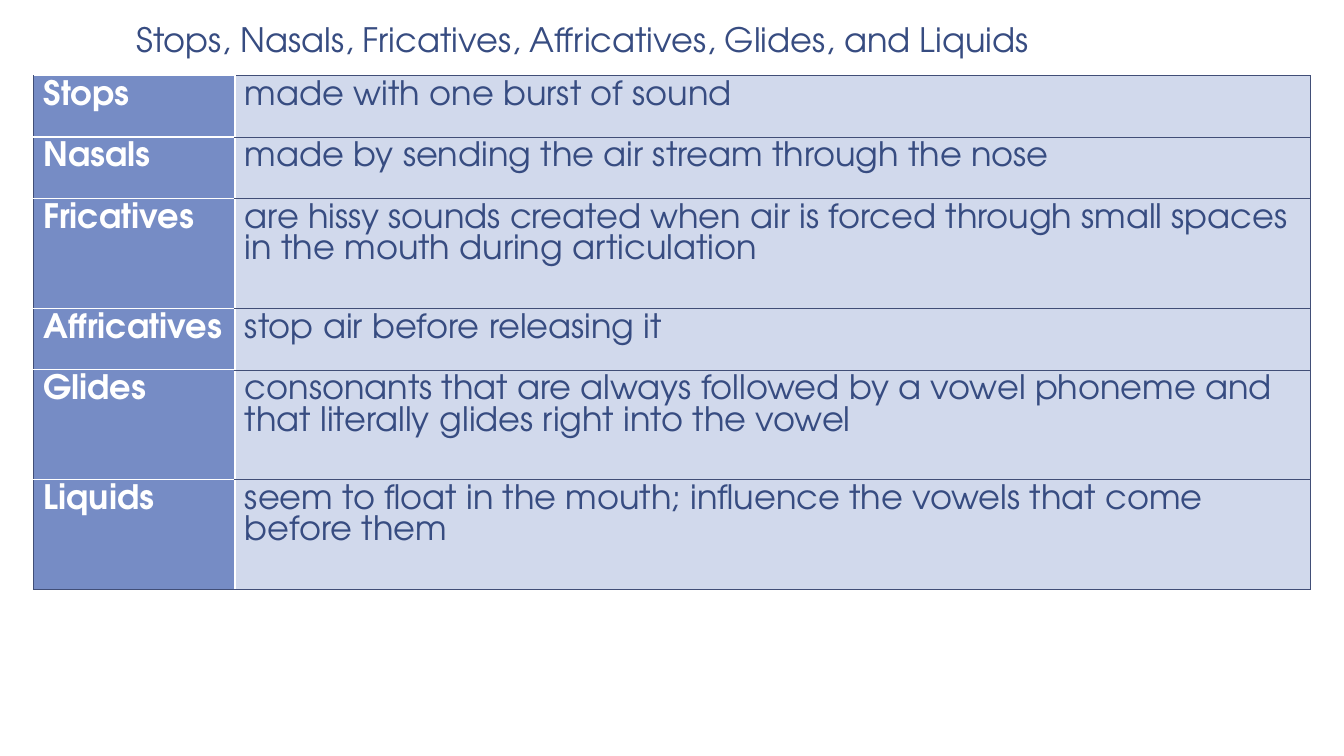
from lxml import etree
from pptx import Presentation
from pptx import util as u
from pptx.dml.color import RGBColor
from pptx.enum import text
from pptx.oxml.ns import qn

# Content
TITLE = "Stops, Nasals, Fricatives, Affricatives, Glides, and Liquids"
CONSONANTS = [
    ("Stops", "made with one burst of sound"),
    ("Nasals", "made by sending the air stream through the nose"),
    ("Fricatives", "are hissy sounds created when air is forced through "
     "small spaces in the mouth during articulation"),
    ("Affricatives", "stop air before releasing it"),
    ("Glides", "consonants that are always followed by a vowel phoneme and "
     "that literally glides right into the vowel"),
    ("Liquids", "seem to float in the mouth; influence the vowels that come "
     "before them"),
]

# Style
FONT, SIZE = "TeX Gyre Adventor", u.Pt(24)
NAVY = RGBColor(0x37, 0x4C, 0x81)
EDGE = RGBColor(0x41, 0x4E, 0x77)
BLUE = RGBColor(0x76, 0x8C, 0xC5)
PALE = RGBColor(0xD1, 0xD9, 0xEC)
WHITE = RGBColor(0xFF, 0xFF, 0xFF)
DARK_LINE, WHITE_LINE = (EDGE, 0.5), (WHITE, 1)
COLUMN_WIDTHS = (2, 10.67)
SHORT_ROW, TALL_ROW = 0.61, 1.09
LINE_LENGTH = 60  # longer descriptions take two lines


def format_font(paragraph, color, bold=False):
    values = {"name": FONT, "size": SIZE, "bold": bold}
    for name, value in values.items():
        setattr(paragraph.font, name, value)
    paragraph.font.color.rgb = color


def set_borders(cell, **borders):
    properties = cell._tc.get_or_add_tcPr()
    for side in "LRTB":
        color, width = borders[side]
        line = etree.SubElement(properties, qn(f"a:ln{side}"), w=str(u.Pt(width)))
        fill = etree.SubElement(line, qn("a:solidFill"))
        etree.SubElement(fill, qn("a:srgbClr"), val=str(color))


presentation = Presentation()
presentation.slide_width = u.Inches(13.33)
presentation.slide_height = u.Inches(7.5)
slide = presentation.slides.add_slide(presentation.slide_layouts[5])

# Title
title = slide.shapes.title
title.left, title.top = u.Inches(1.22), u.Inches(0.08)
title.width, title.height = u.Inches(11.11), u.Inches(0.58)
frame = title.text_frame
frame.text = TITLE
frame_format = {
    "auto_size": text.MSO_AUTO_SIZE.NONE,
    "vertical_anchor": text.MSO_ANCHOR.BOTTOM,
    "margin_left": u.Inches(0.13), "margin_right": u.Inches(0.13),
    "margin_top": u.Inches(0.07), "margin_bottom": u.Inches(0.07),
}
for name, value in frame_format.items():
    setattr(frame, name, value)
paragraph = frame.paragraphs[0]
paragraph.alignment = text.PP_ALIGN.LEFT
paragraph.line_spacing = 0.85
format_font(paragraph, NAVY)

# Table of consonant types
heights = [TALL_ROW if len(description) > LINE_LENGTH else SHORT_ROW
           for _, description in CONSONANTS]
table = slide.shapes.add_table(
    len(CONSONANTS), 2, u.Inches(0.33), u.Inches(0.75),
    u.Inches(sum(COLUMN_WIDTHS)), u.Inches(sum(heights))).table
table.first_row = table.horz_banding = False
for column, width in zip(table.columns, COLUMN_WIDTHS):
    column.width = u.Inches(width)

last = len(CONSONANTS) - 1
for index, (row, height) in enumerate(zip(table.rows, heights)):
    row.height = u.Inches(height)
    name_cell, description_cell = row.cells
    set_borders(name_cell, L=DARK_LINE, R=WHITE_LINE, T=WHITE_LINE,
                B=DARK_LINE if index == last else WHITE_LINE)
    set_borders(description_cell, L=WHITE_LINE, R=DARK_LINE,
                T=DARK_LINE, B=DARK_LINE)
    looks = [(BLUE, WHITE, True), (PALE, NAVY, False)]
    for cell, words, (fill, color, bold) in zip(row.cells, CONSONANTS[index], looks):
        cell.text = words
        cell.fill.solid()
        cell.fill.fore_color.rgb = fill
        format_font(cell.text_frame.paragraphs[0], color, bold)

presentation.save("out.pptx")
